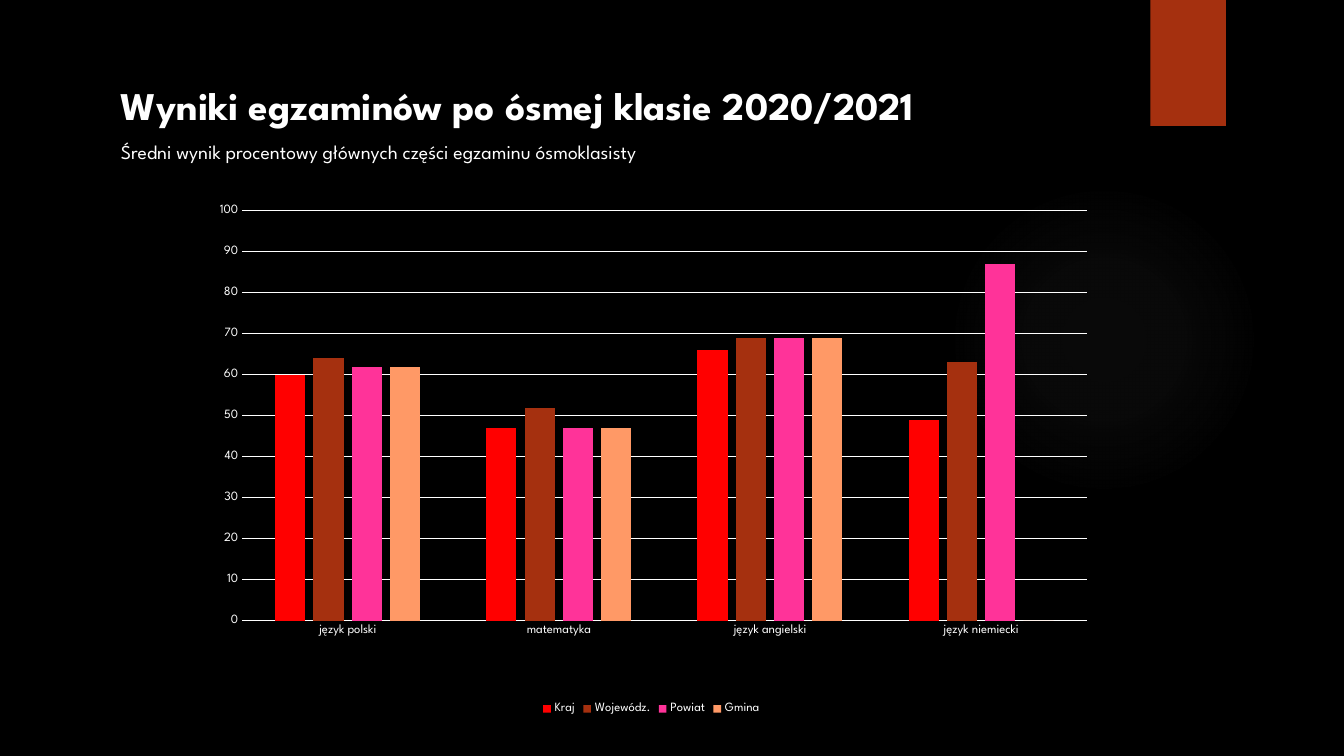
"""Builds a slide comparing eighth-grade exam results by region."""
from lxml import etree
from pptx import Presentation
from pptx import oxml
from pptx import util as u
from pptx.chart import data as chart_data
from pptx.dml import color
from pptx.enum import chart as charts, shapes, text
from pptx.oxml import ns

COLORS = {
    "background": "000000",
    "text": "FFFFFF",
    "glow": "848484",
    "accent": "A5300F",
    "Kraj": "FF0000",
    "Wojewódz.": "A5300F",
    "Powiat": "FF3399",
    "Gmina": "FF9966",
}
FONT = "League Spartan"
SUBJECTS = ["język polski", "matematyka", "język angielski", "język niemiecki"]
RESULTS = {
    "Kraj": [60, 47, 66, 49],
    "Wojewódz.": [64, 52, 69, 63],
    "Powiat": [62, 47, 69, 87],
    "Gmina": [62, 47, 69, 0],
}
GLOW_STOPS = [(0, 7), (36, 6), (69, 0)]
PLOT_AREA = {"x": 0.046, "y": 0.029, "w": 0.937, "h": 0.784}


def rgb(name):
    return color.RGBColor.from_string(COLORS[name])


def inches(*lengths):
    return [u.Inches(length) for length in lengths]


def format_font(font, size, bold=False):
    font.name = FONT
    font.size = u.Pt(size)
    font.bold = bold
    font.color.rgb = rgb("text")


def write_text(holder, words, size, bold=False, wrap=True):
    frame = holder.text_frame
    frame.word_wrap = wrap
    frame.auto_size = text.MSO_AUTO_SIZE.SHAPE_TO_FIT_TEXT
    frame.vertical_anchor = text.MSO_ANCHOR.TOP
    line = frame.paragraphs[0]
    line.alignment = text.PP_ALIGN.LEFT
    run = line.add_run()
    run.text = words
    format_font(run.font, size, bold)


def add_plain_shape(slide, kind, place):
    shape = slide.shapes.add_shape(kind, *inches(*place))
    shape.shadow.inherit = False
    shape.line.fill.background()
    shape.fill.solid()
    shape.fill.fore_color.rgb = rgb("accent")
    return shape


def add_glow(slide, place):
    glow = add_plain_shape(slide, shapes.MSO_SHAPE.OVAL, place)
    stops = "".join(
        f'<a:gs pos="{position * 1000}"><a:srgbClr val="{COLORS["glow"]}">'
        f'<a:alpha val="{opacity * 1000}"/></a:srgbClr></a:gs>'
        for position, opacity in GLOW_STOPS
    )
    gradient = oxml.parse_xml(
        f'<a:gradFill {ns.nsdecls("a")}><a:gsLst>{stops}</a:gsLst>'
        '<a:path path="circle"><a:fillToRect l="50000" t="50000" r="50000" b="50000"/>'
        "</a:path></a:gradFill>"
    )
    solid = glow.element.spPr.find(ns.qn("a:solidFill"))
    solid.getparent().replace(solid, gradient)


def place_plot(chart):
    plot_area = chart.element.xpath(".//c:plotArea")[0]
    for layout in plot_area.findall(ns.qn("c:layout")):
        plot_area.remove(layout)
    layout = etree.Element(ns.qn("c:layout"))
    manual = etree.SubElement(layout, ns.qn("c:manualLayout"))
    settings = {"layoutTarget": "inner", "xMode": "edge", "yMode": "edge", **PLOT_AREA}
    for tag, value in settings.items():
        etree.SubElement(manual, ns.qn(f"c:{tag}")).set("val", str(value))
    plot_area.insert(0, layout)


def format_axes(chart):
    subject_axis, percent_axis = chart.category_axis, chart.value_axis
    for axis in (subject_axis, percent_axis):
        axis.major_tick_mark = charts.XL_TICK_MARK.NONE
        axis.minor_tick_mark = charts.XL_TICK_MARK.NONE
        format_font(axis.tick_labels.font, 9)
    percent_axis.minimum_scale = 0
    percent_axis.maximum_scale = 100
    percent_axis.major_unit = 10
    percent_axis.has_major_gridlines = True
    percent_axis.format.line.fill.background()
    for line in (subject_axis.format.line, percent_axis.major_gridlines.format.line):
        line.color.rgb = rgb("text")
        line.width = u.Pt(0.75)


def add_results_chart(slide, place):
    results = chart_data.CategoryChartData()
    results.categories = SUBJECTS
    for region, scores in RESULTS.items():
        results.add_series(region, scores)
    chart = slide.shapes.add_chart(
        charts.XL_CHART_TYPE.COLUMN_CLUSTERED, *inches(*place), results
    ).chart
    chart.has_title = False
    format_font(chart.font, 10)
    format_axes(chart)
    bars = chart.plots[0]
    bars.gap_width = 219
    bars.overlap = -27
    bars.vary_by_categories = False
    for region in bars.series:
        region.format.fill.solid()
        region.format.fill.fore_color.rgb = rgb(region.name)
    chart.has_legend = True
    chart.legend.position = charts.XL_LEGEND_POSITION.BOTTOM
    chart.legend.include_in_layout = False
    format_font(chart.legend.font, 9)
    place_plot(chart)


def main():
    deck = Presentation()
    deck.slide_width, deck.slide_height = inches(13.33, 7.5)
    slide = deck.slides.add_slide(deck.slide_layouts.get_by_name("Title Only"))
    slide.background.fill.solid()
    slide.background.fill.fore_color.rgb = rgb("background")

    add_glow(slide, (9.41, 1.83, 3.08, 3.08))
    add_plain_shape(slide, shapes.MSO_SHAPE.RECTANGLE, (11.41, 0, 0.75, 1.25))

    title = slide.shapes.title
    title.left, title.top, title.width, title.height = inches(1.1, 0.76, 9, 0.57)
    write_text(title, "Wyniki egzaminów po ósmej klasie 2020/2021", 28, bold=True, wrap=False)
    subtitle = slide.shapes.add_textbox(*inches(1.1, 1.34, 10.44, 0.34))
    write_text(subtitle, "Średni wynik procentowy głównych części egzaminu ósmoklasisty", 14)

    add_results_chart(slide, (1.99, 1.94, 8.94, 5.19))
    deck.save("out.pptx")


if __name__ == "__main__":
    main()
